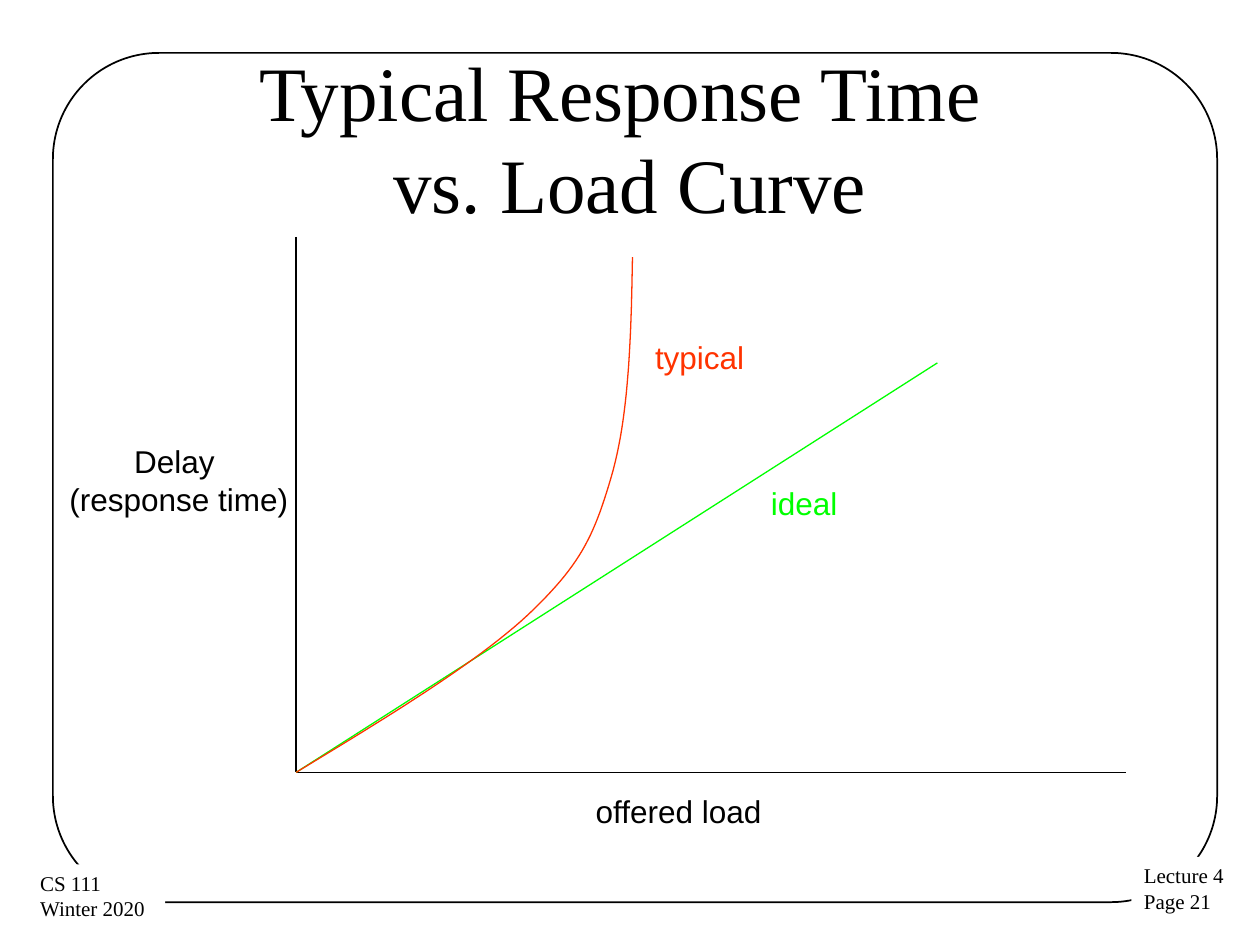
from dataclasses import dataclass

from lxml.etree import SubElement
from pptx import Presentation
from pptx.dml.color import RGBColor
from pptx.enum.shapes import MSO_CONNECTOR, MSO_SHAPE
from pptx.enum.text import MSO_ANCHOR, MSO_AUTO_SIZE, PP_ALIGN
from pptx.oxml.ns import qn
from pptx.util import Inches, Pt


@dataclass(frozen=True)
class Theme:
    ink: RGBColor = RGBColor(0x00, 0x00, 0x00)
    paper: RGBColor = RGBColor(0xFF, 0xFF, 0xFF)
    ideal: RGBColor = RGBColor(0x00, 0xFF, 0x00)
    typical: RGBColor = RGBColor(0xFF, 0x33, 0x00)
    serif: str = "Times New Roman"
    sans: str = "Arial"
    title_size: int = 44
    label_size: int = 18
    footer_size: int = 12
    frame_width: float = 1
    plot_width: float = 0.75


THEME = Theme()
ORIGIN = (2.35, 6.13)
TYPICAL_BENDS = [
    ((3.06, 5.7), (3.77, 5.27), (4.19, 4.88)),
    ((4.6, 4.49), (4.71, 4.27), (4.85, 3.79)),
    ((4.99, 3.32), (5.01, 2.68), (5.02, 2.04)),
]
STEPS_PER_BEND = 24


def place(lengths):
    return [Inches(length) for length in lengths]


def write(frame, text, font=THEME.sans, size=THEME.label_size,
          color=THEME.ink, align=PP_ALIGN.LEFT):
    frame.text = text
    for paragraph in frame.paragraphs:
        paragraph.alignment = align
        for run in paragraph.runs:
            run.font.name = font
            run.font.size = Pt(size)
            run.font.color.rgb = color


def add_label(slide, box, text, **text_format):
    label = slide.shapes.add_textbox(*place(box))
    write(label.text_frame, text, **text_format)
    label.text_frame.word_wrap = False
    label.text_frame.auto_size = MSO_AUTO_SIZE.SHAPE_TO_FIT_TEXT
    return label


def add_footer(slide, box, text):
    """Add a corner note whose fill interrupts the frame."""
    footer = add_label(slide, box, text, font=THEME.serif, size=THEME.footer_size)
    footer.fill.solid()
    footer.fill.fore_color.rgb = THEME.paper


def add_frame(slide):
    frame = slide.shapes.add_shape(MSO_SHAPE.ROUNDED_RECTANGLE,
                                   *place((0.42, 0.42, 9.24, 6.74)))
    frame.adjustments[0] = 0.125
    frame.shadow.inherit = False
    frame.fill.background()
    frame.line.color.rgb = THEME.ink
    frame.line.width = Pt(THEME.frame_width)


def add_title(slide, text):
    title = slide.shapes.title
    title.left, title.top, title.width, title.height = place((0.5, 0.46, 9, 1.25))
    title.text_frame.auto_size = MSO_AUTO_SIZE.NONE
    title.text_frame.vertical_anchor = MSO_ANCHOR.MIDDLE
    write(title.text_frame, text, font=THEME.serif, size=THEME.title_size,
          align=PP_ALIGN.CENTER)


def add_line(slide, start, end, color=THEME.ink):
    line = slide.shapes.add_connector(MSO_CONNECTOR.STRAIGHT, *place(start + end))
    line.line.color.rgb = color
    line.line.width = Pt(THEME.plot_width)
    SubElement(line._element.spPr, qn("a:effectLst"))


def bezier_point(points, t):
    weights = ((1 - t) ** 3, 3 * t * (1 - t) ** 2, 3 * t ** 2 * (1 - t), t ** 3)
    return tuple(sum(w * p[axis] for w, p in zip(weights, points)) for axis in (0, 1))


def add_curve(slide, start, bends, color):
    """Draw joined cubic Bezier bends as one open outline."""
    points, bend_start = [], start
    for bend in bends:
        points += [place(bezier_point((bend_start, *bend), step / STEPS_PER_BEND))
                   for step in range(1, STEPS_PER_BEND + 1)]
        bend_start = bend[-1]
    builder = slide.shapes.build_freeform(*place(start))
    builder.add_line_segments(points, close=False)
    curve = builder.convert_to_shape()
    curve.shadow.inherit = False
    curve.fill.background()
    curve.line.color.rgb = color
    curve.line.width = Pt(THEME.plot_width)


def main():
    deck = Presentation()
    deck.slide_width, deck.slide_height = Inches(10), Inches(7.5)
    slide = deck.slides.add_slide(deck.slide_layouts[5])

    add_frame(slide)
    add_footer(slide, (8.98, 6.8, 0.85, 0.51), "Lecture 4\nPage 21")
    add_footer(slide, (0.22, 6.86, 1.09, 0.51), "CS 111\nWinter 2020")
    add_title(slide, "Typical Response Time \vvs. Load Curve")

    add_line(slide, (2.35, 1.88), ORIGIN)
    add_line(slide, ORIGIN, (8.94, 6.13))
    add_label(slide, (0.44, 3.46, 1.96, 0.71), "Delay \n(response time)",
              align=PP_ALIGN.CENTER)
    add_line(slide, ORIGIN, (7.44, 2.88), THEME.ideal)
    add_label(slide, (6.02, 3.79, 0.79, 0.43), "ideal", color=THEME.ideal)
    add_curve(slide, ORIGIN, TYPICAL_BENDS, THEME.typical)
    add_label(slide, (5.1, 2.63, 0.99, 0.43), "typical", color=THEME.typical)
    add_label(slide, (4.63, 6.24, 1.67, 0.43), "offered load")

    deck.save("out.pptx")


if __name__ == "__main__":
    main()
